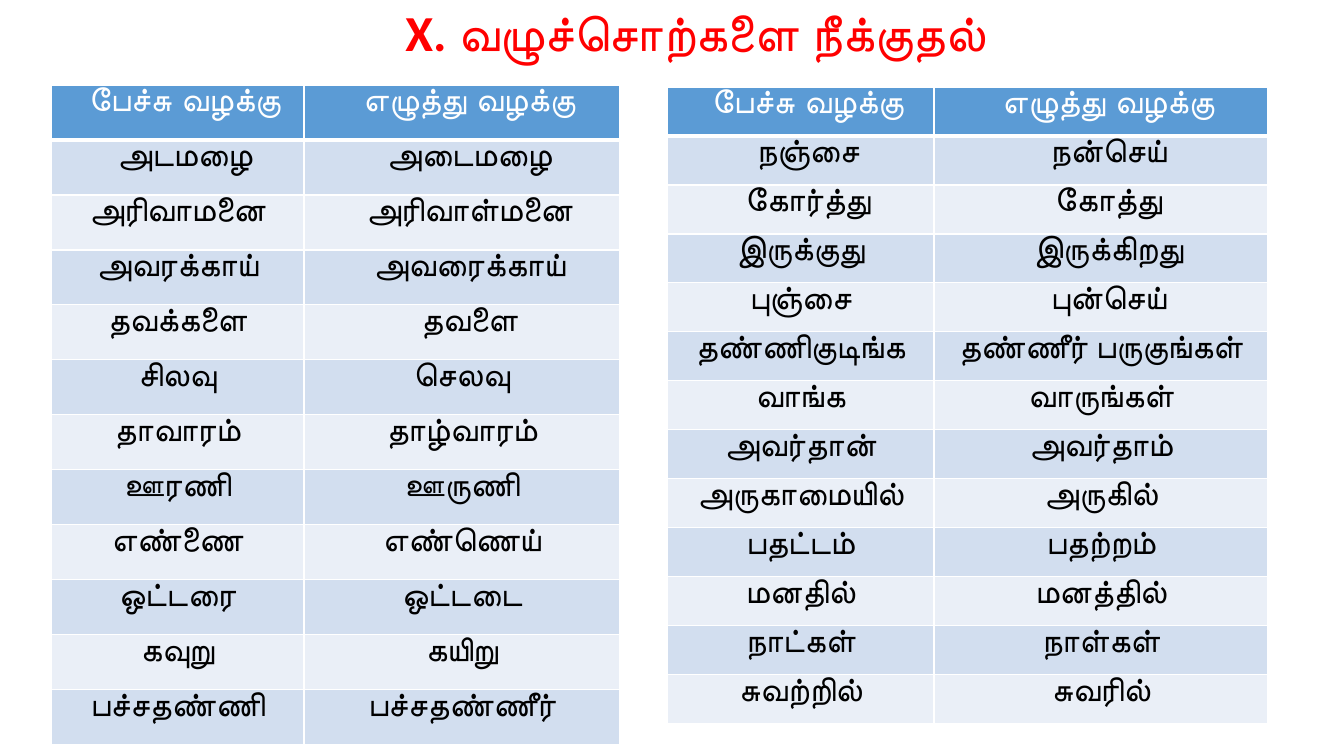
from dataclasses import dataclass

from lxml.etree import SubElement
from pptx import Presentation
from pptx.dml.color import RGBColor
from pptx.enum.text import MSO_ANCHOR, PP_ALIGN
from pptx.oxml.ns import qn
from pptx.slide import Slide
from pptx.table import _Cell
from pptx.text.text import Font, _Paragraph
from pptx.util import Emu, Pt

EMU_PER_PX = 9071
RED = RGBColor(0xFF, 0x00, 0x00)
WHITE = RGBColor(0xFF, 0xFF, 0xFF)
BLACK = RGBColor(0x00, 0x00, 0x00)
HEADER_BLUE = RGBColor(0x5B, 0x9B, 0xD5)
BANDS = (RGBColor(0xEA, 0xEF, 0xF7), RGBColor(0xD2, 0xDE, 0xEF))
THIN, THICK = Pt(1), Pt(3)
INDENT = 15

HEADER = ("பேச்சு வழக்கு", "எழுத்து வழக்கு")


@dataclass(frozen=True)
class WordTable:
    left: int
    top: int
    columns: tuple[int, int]
    row_height: int
    indented_rows: tuple[int, int]
    pairs: tuple[tuple[str, str], ...]


WORD_TABLES = (
    WordTable(51, 85, (253, 316), 55, (2, 5), (
        ("அடமழை", "அடைமழை"),
        ("அரிவாமனை", "அரிவாள்மனை"),
        ("அவரக்காய்", "அவரைக்காய்"),
        ("தவக்களை", "தவளை"),
        ("சிலவு", "செலவு"),
        ("தாவாரம்", "தாழ்வாரம்"),
        ("ஊரணி", "ஊருணி"),
        ("எண்ணை", "எண்ணெய்"),
        ("ஒட்டரை", "ஒட்டடை"),
        ("கவுறு", "கயிறு"),
        ("பச்சதண்ணி", "பச்சதண்ணீர்"),
    )),
    WordTable(667, 87, (267, 334), 49, (3, 5), (
        ("நஞ்சை", "நன்செய்"),
        ("கோர்த்து", "கோத்து"),
        ("இருக்குது", "இருக்கிறது"),
        ("புஞ்சை", "புன்செய்"),
        ("தண்ணிகுடிங்க", "தண்ணீர் பருகுங்கள்"),
        ("வாங்க", "வாருங்கள்"),
        ("அவர்தான்", "அவர்தாம்"),
        ("அருகாமையில்", "அருகில்"),
        ("பதட்டம்", "பதற்றம்"),
        ("மனதில்", "மனத்தில்"),
        ("நாட்கள்", "நாள்கள்"),
        ("சுவற்றில்", "சுவரில்"),
    )),
)


def px(length: int) -> Emu:
    return Emu(length * EMU_PER_PX)


def apply_format(target: object, values: dict[str, object]) -> None:
    for name, value in values.items():
        setattr(target, name, value)


def format_font(font: Font, size: int, bold: bool, color: RGBColor) -> None:
    apply_format(font, {"name": "Calibri", "size": Pt(size), "bold": bold})
    font.color.rgb = color


def add_span(para: _Paragraph, text: str, size: int, bold: bool, color: RGBColor) -> None:
    span = para.add_run()
    span.text = text
    format_font(span.font, size, bold, color)


def add_title(page: Slide) -> None:
    box = page.shapes.add_textbox(px(242), px(0), px(907), px(71))
    apply_format(box.text_frame, {"word_wrap": True, "vertical_anchor": MSO_ANCHOR.MIDDLE})
    para = box.text_frame.paragraphs[0]
    apply_format(para, {"alignment": PP_ALIGN.CENTER, "line_spacing": 0.9})
    add_span(para, "X. ", 36, True, RED)
    add_span(para, "வழுச்சொற்களை நீக்குதல்", 36, False, RED)


def add_borders(cell: _Cell, row: int) -> None:
    properties = cell._tc.get_or_add_tcPr()
    widths = {
        "a:lnL": THIN,
        "a:lnR": THIN,
        "a:lnT": THICK if row == 1 else THIN,
        "a:lnB": THICK if row == 0 else THIN,
    }
    for tag, width in widths.items():
        line = SubElement(properties, qn(tag), w=str(int(width)))
        fill = SubElement(line, qn("a:solidFill"))
        SubElement(fill, qn("a:srgbClr"), val=str(WHITE))


def fill_cell(cell: _Cell, text: str, row: int, indented: bool) -> None:
    is_header = row == 0
    add_borders(cell, row)
    cell.fill.solid()
    cell.fill.fore_color.rgb = HEADER_BLUE if is_header else BANDS[row % 2]
    apply_format(cell, {"margin_top": 0, "margin_bottom": 0, "vertical_anchor": MSO_ANCHOR.TOP})
    para = cell.text_frame.paragraphs[0]
    para.alignment = PP_ALIGN.CENTER
    if indented:
        para._p.get_or_add_pPr().set("marL", str(px(INDENT)))
    add_span(para, text, 24, is_header, WHITE if is_header else BLACK)


def add_word_table(page: Slide, words: WordTable) -> None:
    rows = (HEADER, *words.pairs)
    frame = page.shapes.add_table(
        len(rows), len(HEADER), px(words.left), px(words.top),
        px(sum(words.columns)), px(words.row_height * len(rows)),
    )
    table = frame.table
    for column, width in zip(table.columns, words.columns):
        column.width = px(width)
    for row, pair in enumerate(rows):
        table.rows[row].height = px(words.row_height)
        for column, text in enumerate(pair):
            indented = row < words.indented_rows[column]
            fill_cell(table.cell(row, column), text, row, indented)


def main() -> None:
    deck = Presentation()
    apply_format(deck, {"slide_width": px(1344), "slide_height": px(756)})
    page = deck.slides.add_slide(deck.slide_layouts[6])
    add_title(page)
    for words in WORD_TABLES:
        add_word_table(page, words)
    deck.save("out.pptx")


if __name__ == "__main__":
    main()
